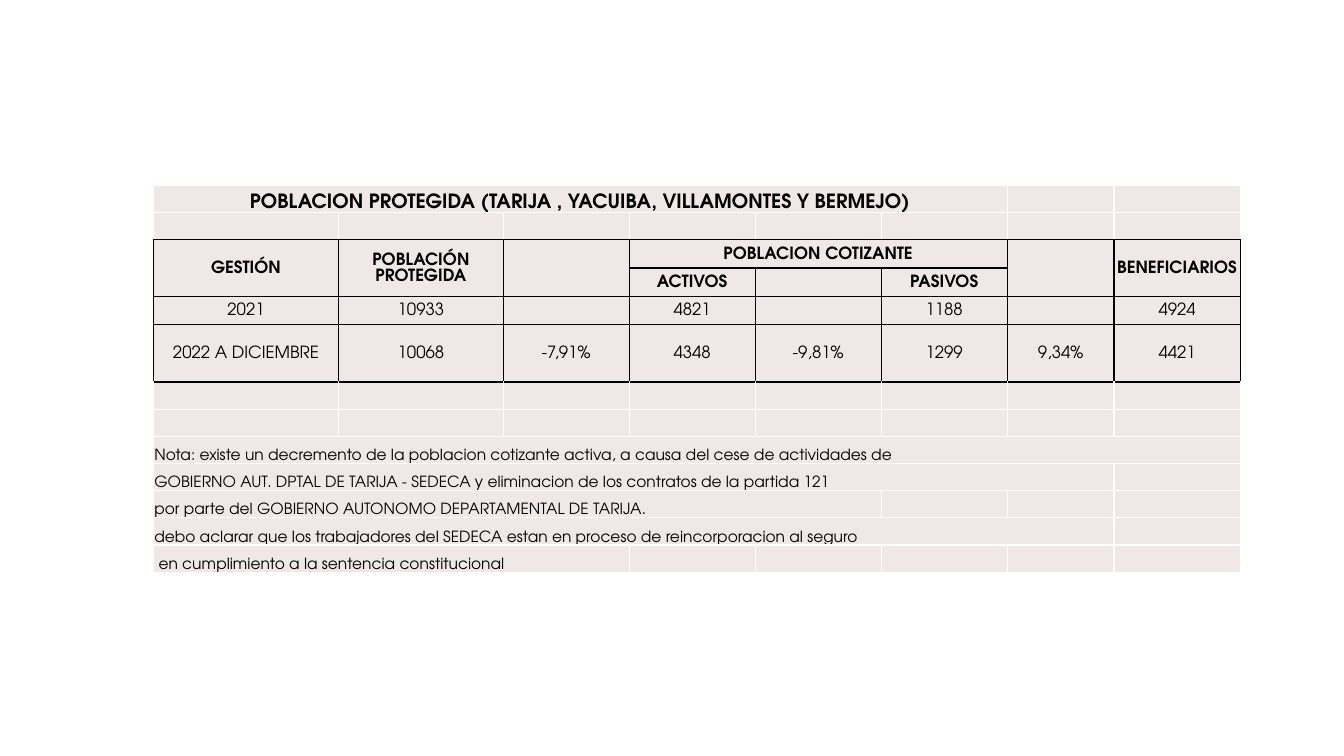
"""Slide with the protected population table of Tarija."""
from lxml import etree
from pptx import Presentation
from pptx.dml.color import RGBColor
from pptx.enum.text import MSO_ANCHOR, PP_ALIGN
from pptx.oxml.ns import qn
from pptx.util import Inches, Pt

CENTER, LEFT = PP_ALIGN.CENTER, PP_ALIGN.LEFT
MIDDLE, BOTTOM = MSO_ANCHOR.MIDDLE, MSO_ANCHOR.BOTTOM
BLACK = RGBColor(0x00, 0x00, 0x00)
WHITE = RGBColor(0xFF, 0xFF, 0xFF)
BLUSH = RGBColor(0xF0, 0xE8, 0xE7)
FONT = "TeX Gyre Adventor"

COLS = [1.84, 1.63, 1.25, 1.25, 1.25, 1.25, 1.06, 1.25]
ROWS = [0.27] * 2 + [0.28] * 3 + [0.57] + [0.27] * 7
GRID_ROWS = range(2, 6)
TITLE = "POBLACION PROTEGIDA (TARIJA , YACUIBA, VILLAMONTES Y BERMEJO)"
HEADERS = [
    (2, 0, "GESTIÓN"), (2, 1, "POBLACIÓN PROTEGIDA"),
    (2, 3, "POBLACION COTIZANTE"), (2, 7, "BENEFICIARIOS"),
    (3, 3, "ACTIVOS"), (3, 5, "PASIVOS"),
]
DATA = [
    ["2021", "10933", "", "4821", "", "1188", "", "4924"],
    ["2022 A DICIEMBRE", "10068", "-7,91%", "4348", "-9,81%", "1299", "9,34%", "4421"],
]
NOTES = [
    ("Nota: existe un decremento de la poblacion cotizante activa, "
     "a causa del cese de actividades de", 8),
    ("GOBIERNO AUT. DPTAL DE TARIJA - SEDECA y eliminacion de los contratos "
     "de la partida 121", 7),
    ("por parte del GOBIERNO AUTONOMO DEPARTAMENTAL DE TARIJA.", 5),
    ("debo aclarar que los trabajadores del SEDECA estan en proceso "
     "de reincorporacion al seguro", 7),
    (" en cumplimiento a la sentencia constitucional", 3),
]


def write(cell, text, size=12, bold=False, underline=False, align=CENTER, anchor=MIDDLE):
    """Put formatted text into a cell."""
    cell.vertical_anchor = anchor
    p = cell.text_frame.paragraphs[0]
    for end in p._p.findall(qn("a:endParaRPr")):
        p._p.remove(end)
    p.alignment = align
    r = p.add_run()
    r.text = text
    r.font.name = FONT
    r.font.size = Pt(size)
    r.font.bold = bold
    r.font.underline = underline
    r.font.color.rgb = BLACK


class Deck:
    """Holds the presentation, its style and the current slide."""

    def __init__(self):
        """Start a wide presentation with one blank slide."""
        self.prs = Presentation()
        self.prs.slide_width = Inches(13.33)
        self.prs.slide_height = Inches(7.5)
        self.s = self.prs.slides.add_slide(self.prs.slide_layouts[6])

    def table(self, left, top, cols, rows):
        """Add an empty styled table."""
        frame = self.s.shapes.add_table(len(rows), len(cols), Inches(left), Inches(top),
                                        Inches(sum(cols)), Inches(sum(rows)))
        table = frame.table
        table.first_row = table.horz_banding = False
        for column, width in zip(table.columns, cols):
            column.width = Inches(width)
        for i, (row, height) in enumerate(zip(table.rows, rows)):
            row.height = Inches(height)
            side = BLACK if i in GRID_ROWS else WHITE
            above = BLACK if i - 1 in GRID_ROWS else side
            below = BLACK if i + 1 in GRID_ROWS else side
            for cell in row.cells:
                self.style_cell(cell, L=side, R=side, T=above, B=below)
        return table

    def style_cell(self, cell, **borders):
        """Set the borders, fill and margins of a cell."""
        cell.margin_left = cell.margin_right = cell.margin_top = Inches(0.01)
        cell.margin_bottom = 0
        tc_pr = cell._tc.get_or_add_tcPr()
        for edge, color in borders.items():
            ln = etree.SubElement(tc_pr, qn(f"a:ln{edge}"), w=str(Pt(1)))
            fill = etree.SubElement(ln, qn("a:solidFill"))
            etree.SubElement(fill, qn("a:srgbClr"), val=str(color))
        cell.fill.solid()
        cell.fill.fore_color.rgb = BLUSH
        p = cell.text_frame.paragraphs[0]
        etree.SubElement(p._p, qn("a:endParaRPr"), sz="1100")


def main():
    """Build and save the slide."""
    deck = Deck()
    table = deck.table(1.52, 1.84, COLS, ROWS)
    cell = table.cell

    cell(0, 0).merge(cell(0, 5))
    write(cell(0, 0), TITLE, size=14, bold=True, underline=True, anchor=BOTTOM)

    for col in (0, 1, 2, 6, 7):
        cell(2, col).merge(cell(3, col))
    cell(2, 3).merge(cell(2, 5))
    for row, col, text in HEADERS:
        write(cell(row, col), text, bold=True)

    for row, values in enumerate(DATA, 4):
        for col, value in enumerate(values):
            if value:
                write(cell(row, col), value)

    for row, (text, span) in enumerate(NOTES, 8):
        cell(row, 0).merge(cell(row, span - 1))
        write(cell(row, 0), text, size=11, align=LEFT, anchor=BOTTOM)

    deck.prs.save("out.pptx")


if __name__ == "__main__":
    main()
